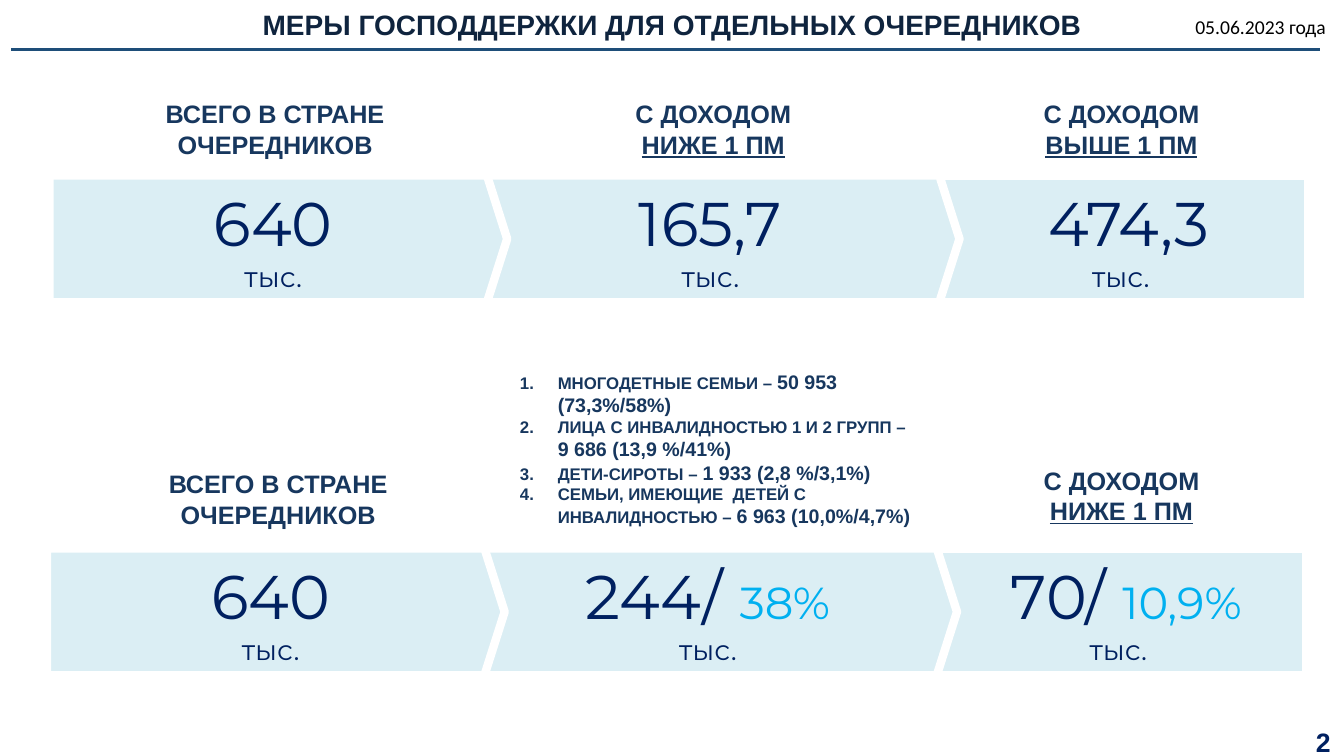
from dataclasses import dataclass

from lxml.etree import SubElement
from pptx import Presentation
from pptx.dml.color import RGBColor as RGB
from pptx.enum.shapes import MSO_CONNECTOR as CONN, MSO_SHAPE as SHAPE
from pptx.enum.text import MSO_ANCHOR as ANCHOR, MSO_AUTO_SIZE as FIT, PP_ALIGN as ALIGN
from pptx.oxml.ns import qn
from pptx.util import Pt


@dataclass(frozen=True)
class Theme:
    title: str = "0F243E"
    heading: str = "17375E"
    navy: str = "002060"
    accent: str = "00B0F0"
    band: str = "DBEEF4"
    rule: str = "1E4E79"
    white: str = "FFFFFF"
    black: str = "000000"
    sans: str = "Arial"
    figures: str = "Montserrat"
    plain: str = "Calibri"
    big: int = 44
    share: int = 32
    unit: int = 20
    title_size: int = 20
    page_size: int = 19
    head_size: int = 18
    body: int = 14
    small: int = 12


class Deck:
    """Style and current slide, with one method per kind of element."""

    def __init__(self, prs, theme):
        self.t = theme
        self.slide = prs.slides.add_slide(prs.slide_layouts[6])

    def fill_text(self, tf, paras, align, base):
        """Each paragraph is a list of (text, format overrides)."""
        for i, runs in enumerate(paras):
            p = tf.paragraphs[0] if i == 0 else tf.add_paragraph()
            p.alignment = align
            for text, extra in runs:
                r = p.add_run()
                r.text = text
                fmt = {**base, **extra}
                r.font.color.rgb = RGB.from_string(fmt.pop("color"))
                for name, value in fmt.items():
                    setattr(r.font, name, Pt(value) if name == "size" else value)

    def text(self, box, paras, align, base, **frame):
        sp = self.slide.shapes.add_textbox(*map(Pt, box))
        tf = sp.text_frame
        for name, value in {"word_wrap": True, "auto_size": FIT.SHAPE_TO_FIT_TEXT, **frame}.items():
            setattr(tf, name, value)
        self.fill_text(tf, paras, align, base)
        return tf

    def heading(self, x, y, w, first, second, underline):
        t = self.t
        base = dict(name=t.sans, size=t.head_size, bold=True, color=t.heading)
        self.text((x, y, w, 51), [[(first, {})], [(second, {"underline": underline})]],
                  ALIGN.CENTER, base)

    def numbered(self, box, items):
        t = self.t
        base = dict(name=t.sans, size=t.body, bold=True, color=t.heading)
        paras = [[(label, {"size": t.small}), (value, {})] for label, value in items]
        for p in self.text(box, paras, ALIGN.LEFT, base).paragraphs:
            pPr = p._p.get_or_add_pPr()
            pPr.set("marL", str(Pt(27)))
            pPr.set("indent", str(-Pt(27)))
            SubElement(pPr, qn("a:buFont")).set("typeface", t.sans)
            SubElement(pPr, qn("a:buAutoNum")).set("type", "arabicPeriod")

    def arrow(self, x, y, w, point, number, share):
        t = self.t
        sp = self.slide.shapes.add_shape(SHAPE.PENTAGON, Pt(x), Pt(y), Pt(w), Pt(90.7))
        sp.adjustments[0] = point
        sp.shadow.inherit = False
        sp.fill.solid()
        sp.fill.fore_color.rgb = RGB.from_string(t.band)
        sp.line.color.rgb = RGB.from_string(t.white)
        sp.line.width = Pt(6)
        tf = sp.text_frame
        tf.vertical_anchor = ANCHOR.MIDDLE
        runs = [(number, {})]
        if share:
            runs.append((share, {"size": t.share, "color": t.accent}))
        base = dict(name=t.figures, size=t.big, color=t.navy)
        self.fill_text(tf, [runs, [("тыс.", {"size": t.unit})]], ALIGN.CENTER, base)

    def arrow_row(self, x, y, figures):
        """Three bands, the right one at the back so that the points overlap it."""
        bands = [(0, 326.9, 0.159), (301.5, 348.5, 0.159), (631.3, 267.8, 0)]
        for (dx, w, point), (number, share) in reversed(list(zip(bands, figures))):
            self.arrow(x + dx, y, w, point, number, share)

    def line(self, x1, y, x2):
        ln = self.slide.shapes.add_connector(CONN.STRAIGHT, Pt(x1), Pt(y), Pt(x2), Pt(y))
        ln.line.color.rgb = RGB.from_string(self.t.rule)
        ln.line.width = Pt(2.25)
        SubElement(ln._element.spPr, qn("a:effectLst"))


def main():
    prs = Presentation()
    prs.slide_width, prs.slide_height = Pt(960), Pt(540)
    t = Theme()
    s = Deck(prs, t)

    # Header
    tf = s.text((0, -0.7, 960, 38.9), [[("МЕРЫ ГОСПОДДЕРЖКИ ДЛЯ ОТДЕЛЬНЫХ ОЧЕРЕДНИКОВ", {})]],
                ALIGN.CENTER, dict(name=t.sans, size=t.title_size, bold=True, color=t.title),
                auto_size=FIT.NONE, vertical_anchor=ANCHOR.MIDDLE, margin_left=Pt(9.4),
                margin_right=Pt(9.4), margin_top=Pt(5), margin_bottom=Pt(5))
    tf.paragraphs[0].line_spacing = 0.9
    s.text((846.7, 7.2, 110.9, 24.5), [[("05.06.2023 года", {})]], ALIGN.LEFT,
           dict(name=t.plain, size=t.body, color=t.black))
    s.line(7.9, 35.3, 943.2)

    # Bands with figures
    s.arrow_row(35.4, 125.3, [("640", ""), ("165,7", ""), (" 474,3", "")])
    s.arrow_row(33.6, 391.7, [("640", ""), ("244/ ", "38%"), (" 70/ ", "10,9%")])

    # Headings above the bands
    total, income = ("ВСЕГО В СТРАНЕ", "ОЧЕРЕДНИКОВ", False), "С ДОХОДОМ"
    below, above = (income, "НИЖЕ 1 ПМ", True), (income, "ВЫШЕ 1 ПМ", True)
    for x, y, w, words in [(80.6, 67, 231.8, total), (419.8, 67, 179.3, below),
                           (711.4, 67, 179.3, above), (82.8, 331.2, 231.8, total),
                           (711.4, 329, 179.3, below)]:
        s.heading(x, y, w, *words)

    # Groups in the queue
    s.numbered((364.3, 260.6, 294.5, 121), [
        ("МНОГОДЕТНЫЕ СЕМЬИ – ", "50 953 (73,3%/58%)"),
        ("ЛИЦА С ИНВАЛИДНОСТЬЮ 1 И 2 ГРУПП – ", "9 686 (13,9 %/41%)"),
        ("ДЕТИ-СИРОТЫ – ", "1 933 (2,8 %/3,1%)"),
        ("СЕМЬИ, ИМЕЮЩИЕ  ДЕТЕЙ С ИНВАЛИДНОСТЬЮ – ", "6 963 (10,0%/4,7%)"),
    ])

    # Page number
    s.text((932.4, 514.8, 25.2, 30.2), [[("2", {})]], ALIGN.RIGHT,
           dict(name=t.sans, size=t.page_size, bold=True, color=t.navy), word_wrap=False)

    prs.save("out.pptx")


if __name__ == "__main__":
    main()
